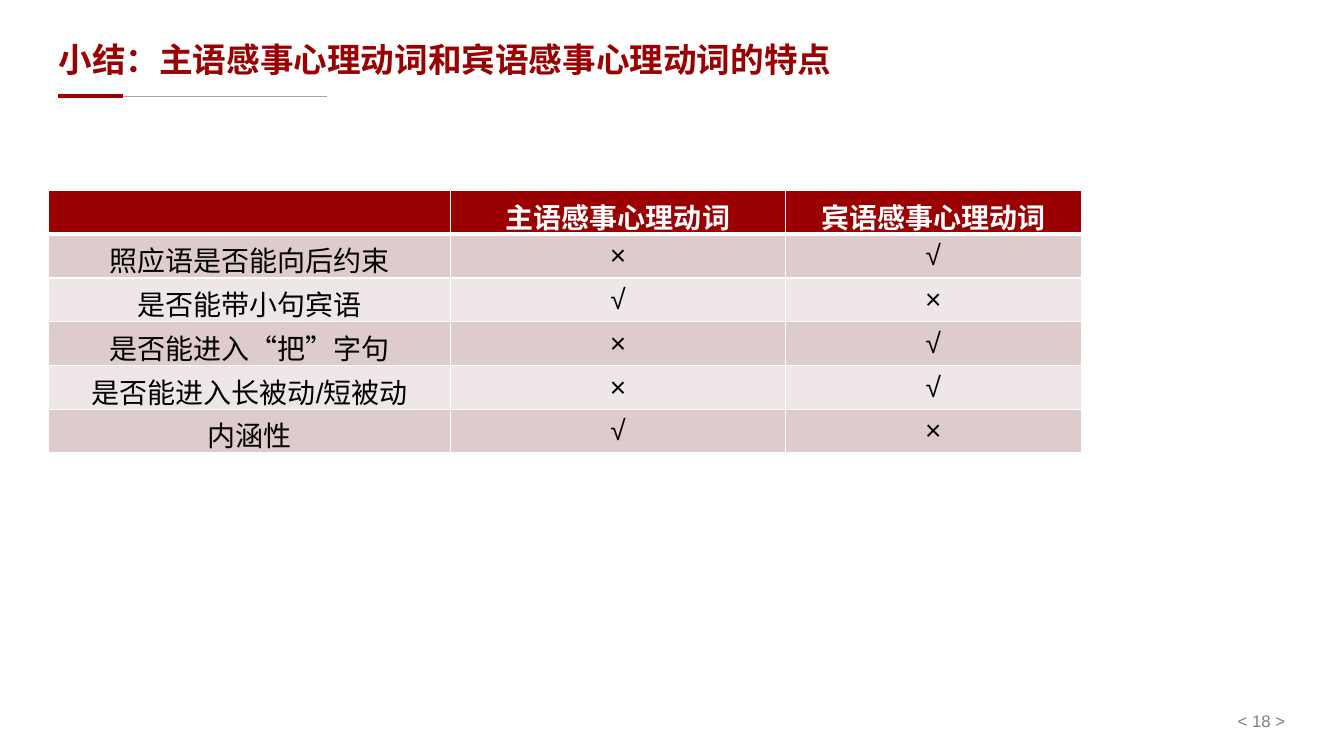
from lxml import etree
from pptx import Presentation
from pptx.dml.color import RGBColor
from pptx.enum import shapes, text
from pptx.oxml import ns
from pptx.util import Pt

COLORS = {"red": "9A0001", "rule": "A6A6A6", "number": "808080", "white": "FFFFFF",
          "black": "000000", "dark_band": "DECCCC", "light_band": "EFE7E7"}


def style_text(paragraph, size, color, bold, align):
    paragraph.font.name = "Arial"
    paragraph.font.size = Pt(size)
    paragraph.font.bold = bold
    paragraph.font.color.rgb = RGBColor.from_string(COLORS[color])
    paragraph.alignment = align


def add_border(cell, side, width):
    line = etree.SubElement(cell._tc.get_or_add_tcPr(), ns.qn(f"a:{side}"), w=str(Pt(width)))
    fill = etree.SubElement(line, ns.qn("a:solidFill"))
    etree.SubElement(fill, ns.qn("a:srgbClr"), val=COLORS["white"])


prs = Presentation()
prs.slide_width = Pt(960)
prs.slide_height = Pt(540)
slide = prs.slides.add_slide(prs.slide_layouts[5])

for right, color, width in [(233.3, "rule", 0.5), (87.8, "red", 3)]:
    underline = slide.shapes.add_connector(
        shapes.MSO_CONNECTOR.STRAIGHT, Pt(41.8), Pt(68.5), Pt(right), Pt(68.5))
    underline.line.color.rgb = RGBColor.from_string(COLORS[color])
    underline.line.width = Pt(width)
    etree.SubElement(underline._element.spPr, ns.qn("a:effectLst"))

title = slide.shapes.title
title.left, title.top, title.width, title.height = Pt(34.6), Pt(19.4), Pt(712.8), Pt(49)
title.text_frame.text = "小结：主语感事心理动词和宾语感事心理动词的特点"
title.text_frame.vertical_anchor = text.MSO_ANCHOR.MIDDLE
title.text_frame.paragraphs[0].line_spacing = 0.9
style_text(title.text_frame.paragraphs[0], 24, "red", True, text.PP_ALIGN.LEFT)

page_number = slide.shapes.add_textbox(Pt(709.2), Pt(503.3), Pt(216), Pt(23))
page_number.text_frame.word_wrap = True
page_number.text_frame.vertical_anchor = text.MSO_ANCHOR.MIDDLE
page_number.text_frame.text = "< 18 >"
style_text(page_number.text_frame.paragraphs[0], 12, "number", False, text.PP_ALIGN.RIGHT)

features = [
    ("", "主语感事心理动词", "宾语感事心理动词"),
    ("照应语是否能向后约束", "×", "√"),
    ("是否能带小句宾语", "√", "×"),
    ("是否能进入“把”字句", "×", "√"),
    ("是否能进入长被动/短被动", "×", "√"),
    ("内涵性", "√", "×"),
]
comparison = slide.shapes.add_table(
    len(features), 3, Pt(34.6), Pt(136.1), Pt(738), Pt(187.2)).table
for column, width in zip(comparison.columns, (287.3, 239, 211.7)):
    column.width = Pt(width)

for r, feature in enumerate(features):
    comparison.rows[r].height = Pt(29.5)
    header = r == 0
    band = "red" if header else "dark_band" if r % 2 else "light_band"
    for c, wording in enumerate(feature):
        cell = comparison.cell(r, c)
        cell.text = wording
        cell.vertical_anchor = text.MSO_ANCHOR.MIDDLE
        style_text(cell.text_frame.paragraphs[0], 20, "white" if header else "black",
                   header, text.PP_ALIGN.CENTER)
        for side in ("lnL", "lnR", "lnT", "lnB"):
            thick = (header and side == "lnB") or (r == 1 and side == "lnT")
            add_border(cell, side, 3 if thick else 1)
        cell.fill.solid()
        cell.fill.fore_color.rgb = RGBColor.from_string(COLORS[band])

prs.save("out.pptx")
